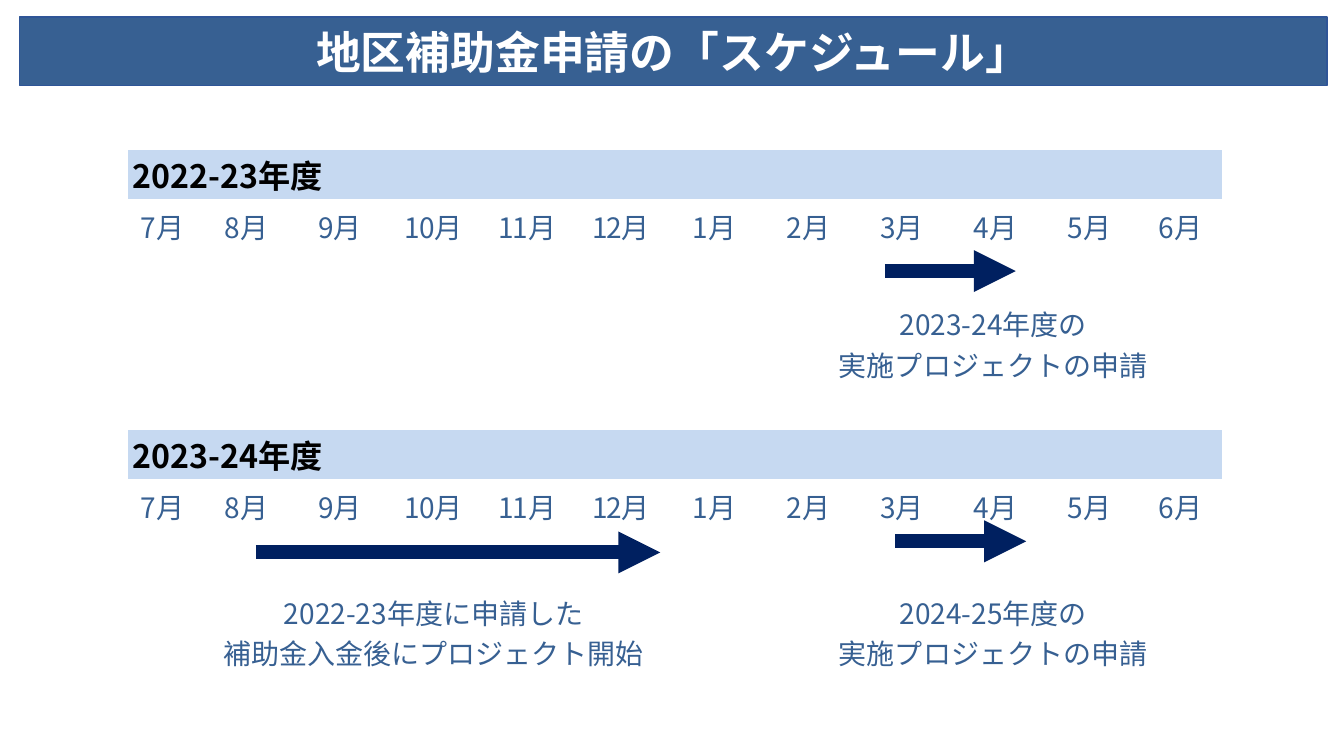
from lxml.etree import SubElement
from pptx import Presentation
from pptx.dml.color import RGBColor
from pptx.enum.shapes import MSO_CONNECTOR as CONNECTOR, MSO_SHAPE as SHAPE
from pptx.enum.text import MSO_ANCHOR as ANCHOR, PP_ALIGN as ALIGN
from pptx.oxml.ns import qn
from pptx.util import Cm, Pt

FONT = "Noto Sans CJK JP"
BLUE = RGBColor(0x37, 0x60, 0x92)
OUTLINE = RGBColor(0x2F, 0x55, 0x97)
PALE_BLUE = RGBColor(0xC6, 0xD9, 0xF1)
NAVY = RGBColor(0x00, 0x20, 0x60)
BLACK = RGBColor(0, 0, 0)
WHITE = RGBColor(0xFF, 0xFF, 0xFF)


def write(frame, text, size=20, color=BLUE, bold=False, align=ALIGN.CENTER, spacing=0):
    for index, line in enumerate(text.split("\n")):
        paragraph = frame.add_paragraph() if index else frame.paragraphs[0]
        paragraph.alignment = align
        run = paragraph.add_run()
        run.text = line
        run.font.size = Pt(size)
        run.font.bold = bold
        run.font.color.rgb = color
        run.font.name = FONT
        properties = run.font._element
        SubElement(properties, qn("a:ea")).set("typeface", FONT)
        if spacing:
            properties.set("spc", str(spacing * 100))


def style_cell(cell, fill_color=None):
    properties = cell._tc.get_or_add_tcPr()
    for side in ("lnL", "lnR", "lnT", "lnB"):
        border = SubElement(properties, qn("a:" + side), w=str(Pt(4.5)))
        fill = SubElement(border, qn("a:solidFill"))
        SubElement(fill, qn("a:srgbClr"), val=str(WHITE))
    if fill_color is None:
        cell.fill.background()
    else:
        cell.fill.solid()
        cell.fill.fore_color.rgb = fill_color
    cell.margin_left = cell.margin_right = Cm(0.18)
    cell.margin_top = cell.margin_bottom = Cm(0.1)


presentation = Presentation()
presentation.slide_width = Cm(33.87)
presentation.slide_height = Cm(19.05)
slide = presentation.slides.add_slide(presentation.slide_layouts[6])

# Schedule table
column_widths = [1.88] + [2.36] * 10 + [2.24]
row_heights = [1.22, 1.22, 1.22, 1.7, 0.91, 1.22, 1.22, 1.45, 1.7, 1.22, 1.22]
table = slide.shapes.add_table(
    len(row_heights), len(column_widths), Cm(3.15), Cm(3.71),
    Cm(sum(column_widths)), Cm(sum(row_heights))).table
table.first_row = False
table.horz_banding = False
for column, width in zip(table.columns, column_widths):
    column.width = Cm(width)
for row, height in zip(table.rows, row_heights):
    row.height = Cm(height)

fiscal_years = {0: "2022-23年度", 5: "2023-24年度"}
for row_index in range(len(row_heights)):
    for column_index in range(len(column_widths)):
        style_cell(table.cell(row_index, column_index),
                   PALE_BLUE if row_index in fiscal_years else None)

# Fiscal years and their months, July to June
months = [7, 8, 9, 10, 11, 12, 1, 2, 3, 4, 5, 6]
for row_index, year in fiscal_years.items():
    header = table.cell(row_index, 0)
    header.merge(table.cell(row_index, 11))
    header.vertical_anchor = ANCHOR.BOTTOM
    write(header.text_frame, year, size=23, color=BLACK, bold=True, align=ALIGN.LEFT)
    for column_index, month in enumerate(months):
        cell = table.cell(row_index + 1, column_index)
        cell.vertical_anchor = ANCHOR.BOTTOM
        write(cell.text_frame, f"{month}月", spacing=-1 if month >= 10 else 0)

# Merged cells with what happens in each period
for row_index, first, last, text in [
    (3, 1, 5, ""),
    (3, 7, 11, "2023-24年度の\n実施プロジェクトの申請"),
    (8, 1, 5, "2022-23年度に申請した\n補助金入金後にプロジェクト開始"),
    (8, 7, 11, "2024-25年度の\n実施プロジェクトの申請"),
    (9, 0, 5, ""),
    (10, 0, 5, ""),
]:
    cell = table.cell(row_index, first)
    cell.merge(table.cell(row_index, last))
    if text:
        write(cell.text_frame, text)

# Period arrows
for start, end, y in [(22.3, 25.6, 6.83), (6.45, 16.64, 13.92), (22.56, 25.86, 13.64)]:
    arrow = slide.shapes.add_connector(CONNECTOR.STRAIGHT, Cm(start), Cm(y), Cm(end), Cm(y))
    arrow.line.color.rgb = NAVY
    arrow.line.width = Pt(10)
    SubElement(arrow.line._get_or_add_ln(), qn("a:tailEnd"), type="triangle")
    SubElement(arrow._element.spPr, qn("a:effectLst"))

# Title bar
title = slide.shapes.add_shape(SHAPE.RECTANGLE, Cm(0.5), Cm(0.43), Cm(32.94), Cm(1.73))
title.shadow.inherit = False
title.fill.solid()
title.fill.fore_color.rgb = BLUE
title.line.color.rgb = OUTLINE
title.line.width = Pt(1)
title.text_frame.word_wrap = True
title.text_frame.vertical_anchor = ANCHOR.MIDDLE
write(title.text_frame, "地区補助金申請の「スケジュール」", size=32, color=WHITE, bold=True)

presentation.save("out.pptx")
